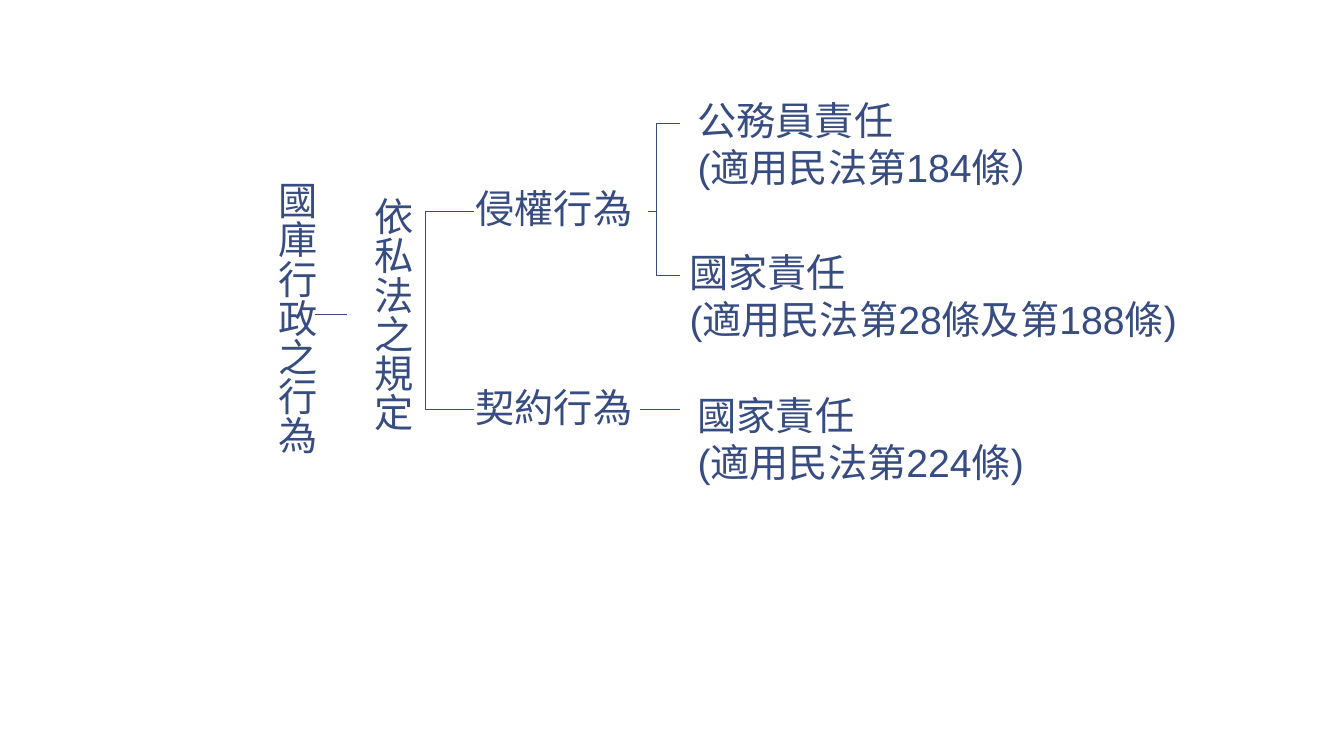
from pptx import Presentation
from pptx.dml.color import RGBColor
from pptx.enum.shapes import MSO_CONNECTOR
from pptx.enum.text import MSO_AUTO_SIZE
from pptx.oxml.ns import qn
from pptx.util import Inches, Pt
from lxml.etree import SubElement

NAVY = "374C81"

ROOT_Y = 3.12
TORT_Y, CONTRACT_Y = 2.1, 4.06
OFFICIAL_Y, STATE_Y = 1.23, 2.73
ACTS_X, DUTIES_X = 4.22, 6.51
DUTIES_END = 6.74


def color(hex_text):
    return RGBColor.from_string(hex_text)


def add_label(slide, text, left, top, width, height, vertical=False, wrap=False):
    shape = slide.shapes.add_textbox(
        Inches(left), Inches(top), Inches(width), Inches(height))
    frame = shape.text_frame
    frame.word_wrap = wrap
    frame.auto_size = MSO_AUTO_SIZE.SHAPE_TO_FIT_TEXT
    if vertical:
        shape.element.txBody.find(qn("a:bodyPr")).set("vert", "eaVert")
    frame.text = text
    for paragraph in frame.paragraphs:
        for run in paragraph.runs:
            run.font.name = "Arial"
            run.font.size = Pt(28)
            run.font.color.rgb = color(NAVY)


def add_line(slide, x1, y1, x2, y2):
    line = slide.shapes.add_connector(
        MSO_CONNECTOR.STRAIGHT, Inches(x1), Inches(y1), Inches(x2), Inches(y2))
    line.line.color.rgb = color(NAVY)
    line.line.width = Pt(0.75)
    SubElement(line.element.spPr, qn("a:effectLst"))


def add_bracket(slide, x, end_x, top, bottom):
    """Draw a spine at x with an arm to end_x at both ends."""
    add_line(slide, x, top, x, bottom)
    for y in (top, bottom):
        add_line(slide, x, y, end_x, y)


def main():
    presentation = Presentation()
    presentation.slide_width = Inches(13.33)
    presentation.slide_height = Inches(7.5)
    slide = presentation.slides.add_slide(presentation.slide_layouts[6])

    add_label(slide, "國庫行政之行為", 2.56, 1.7, 0.67, 2.85, vertical=True)
    add_label(slide, "依私法之規定", 3.51, 1.86, 0.67, 2.46, vertical=True)
    for act, top in (("侵權行為", 1.78), ("契約行為", 3.75)):
        add_label(slide, act, 4.62, top, 1.76, 0.57)

    duties = (
        ("公務員責任\n(適用民法第184條）", 6.82, 0.91, 3.7),
        ("國家責任\n(適用民法第28條及第188條)", 6.74, 2.41, 5.05),
        ("國家責任\n(適用民法第224條)", 6.82, 3.83, 3.45),
    )
    for text, left, top, width in duties:
        add_label(slide, text, left, top, width, 1.03, wrap=True)

    add_line(slide, 3.12, ROOT_Y, 3.44, ROOT_Y)
    add_bracket(slide, ACTS_X, 4.7, TORT_Y, CONTRACT_Y)
    add_line(slide, 6.43, TORT_Y, DUTIES_X, TORT_Y)
    add_bracket(slide, DUTIES_X, DUTIES_END, OFFICIAL_Y, STATE_Y)
    add_line(slide, 6.35, CONTRACT_Y, DUTIES_END, CONTRACT_Y)

    presentation.save("out.pptx")


if __name__ == "__main__":
    main()
